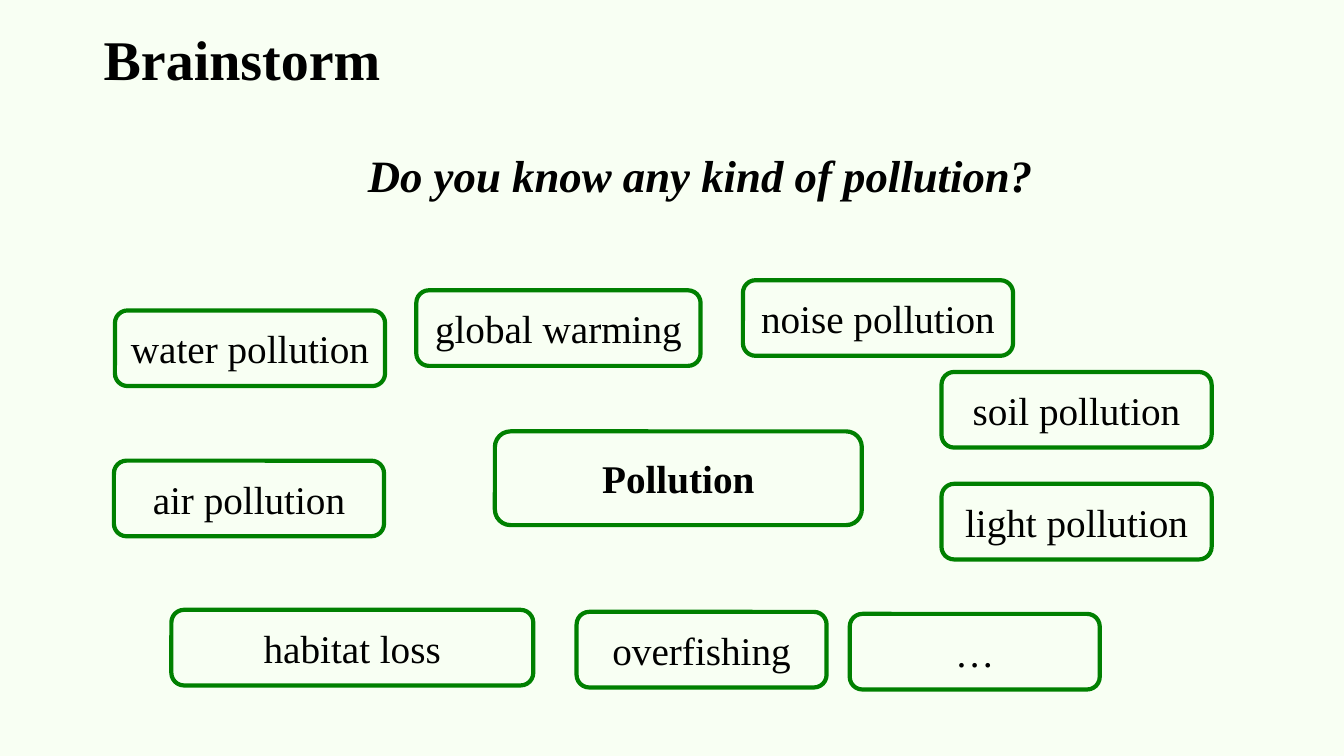
"""Build the pollution brainstorm slide."""
from dataclasses import dataclass

from pptx import Presentation, util as u
from pptx.dml import color
from pptx.enum import shapes, text


@dataclass(frozen=True)
class Theme:
    font: str = "Times New Roman"
    background: color.RGBColor = color.RGBColor(0xF8, 0xFF, 0xF3)
    ink: color.RGBColor = color.RGBColor(0, 0, 0)
    outline: color.RGBColor = color.RGBColor(0, 0x80, 0)
    outline_width: float = 3
    title_size: int = 40
    question_size: int = 32
    idea_size: int = 28


@dataclass(frozen=True)
class Cell:
    col: float
    row: float
    cols: float
    rows: float = 7.5


@dataclass(frozen=True)
class Label:
    words: str
    cell: Cell
    size: int
    bold: bool = False
    italic: bool = False
    align: text.PP_ALIGN = text.PP_ALIGN.CENTER
    spacing: float | None = None


THEME = Theme()
UNIT = u.Inches(0.1)
COLUMNS, ROWS = 133.33, 75
IDEA_COLS = 26.8
RIGHT_COL = 93.4

HEADINGS = [
    Label("Do you know any kind of pollution?", Cell(35.5, 13.1, 74.5),
          THEME.question_size, True, True, text.PP_ALIGN.JUSTIFY, 1.2),
    Label("Brainstorm", Cell(9.3, 1.9, 61.9, 7.7),
          THEME.title_size, True, align=text.PP_ALIGN.LEFT),
]
IDEAS = [
    Label("Pollution", Cell(49.1, 42.8, 36.4, 9.3), THEME.idea_size, True),
    *(Label(words, cell, THEME.idea_size) for words, cell in [
        ("global warming", Cell(41.3, 28.8, 28.2)),
        ("water pollution", Cell(11.4, 30.8, IDEA_COLS)),
        ("air pollution", Cell(11.3, 45.7, IDEA_COLS)),
        ("habitat loss", Cell(17, 60.5, 35.9)),
        ("…", Cell(84.3, 60.9, 24.8)),
        ("soil pollution", Cell(RIGHT_COL, 36.9, IDEA_COLS)),
        ("light pollution", Cell(RIGHT_COL, 48, IDEA_COLS)),
        ("noise pollution", Cell(73.7, 27.8, IDEA_COLS)),
        ("overfishing", Cell(57.2, 60.7, 24.8)),
    ]),
]


def place(cell: Cell) -> tuple[int, ...]:
    """Turn a grid cell into left, top, width and height."""
    return tuple(round(n * UNIT) for n in (cell.col, cell.row, cell.cols, cell.rows))


def write(tf, label: Label) -> None:
    """Set and format the words of a label."""
    tf.text = label.words
    p = tf.paragraphs[0]
    p.alignment = label.align
    if label.spacing:
        p.line_spacing = label.spacing
    r = p.runs[0]
    r.font.name = THEME.font
    r.font.size = u.Pt(label.size)
    r.font.bold = label.bold
    r.font.italic = label.italic
    r.font.color.rgb = THEME.ink


def draw_heading(s, label: Label) -> None:
    """Add a plain text box."""
    tf = s.shapes.add_textbox(*place(label.cell)).text_frame
    tf.word_wrap = True
    tf.auto_size = text.MSO_AUTO_SIZE.SHAPE_TO_FIT_TEXT
    write(tf, label)


def draw_idea(s, label: Label) -> None:
    """Add an outlined rounded box."""
    sp = s.shapes.add_shape(shapes.MSO_SHAPE.ROUNDED_RECTANGLE, *place(label.cell))
    sp.shadow.inherit = False
    sp.fill.background()
    sp.line.color.rgb = THEME.outline
    sp.line.width = u.Pt(THEME.outline_width)
    tf = sp.text_frame
    tf.word_wrap = False
    tf.vertical_anchor = text.MSO_ANCHOR.MIDDLE
    write(tf, label)


def main() -> None:
    """Draw the slide and save it."""
    prs = Presentation()
    prs.slide_width, prs.slide_height = round(COLUMNS * UNIT), ROWS * UNIT
    s = prs.slides.add_slide(prs.slide_layouts[6])
    s.background.fill.solid()
    s.background.fill.fore_color.rgb = THEME.background
    for heading in HEADINGS:
        draw_heading(s, heading)
    for idea in IDEAS:
        draw_idea(s, idea)
    prs.save("out.pptx")


if __name__ == "__main__":
    main()
